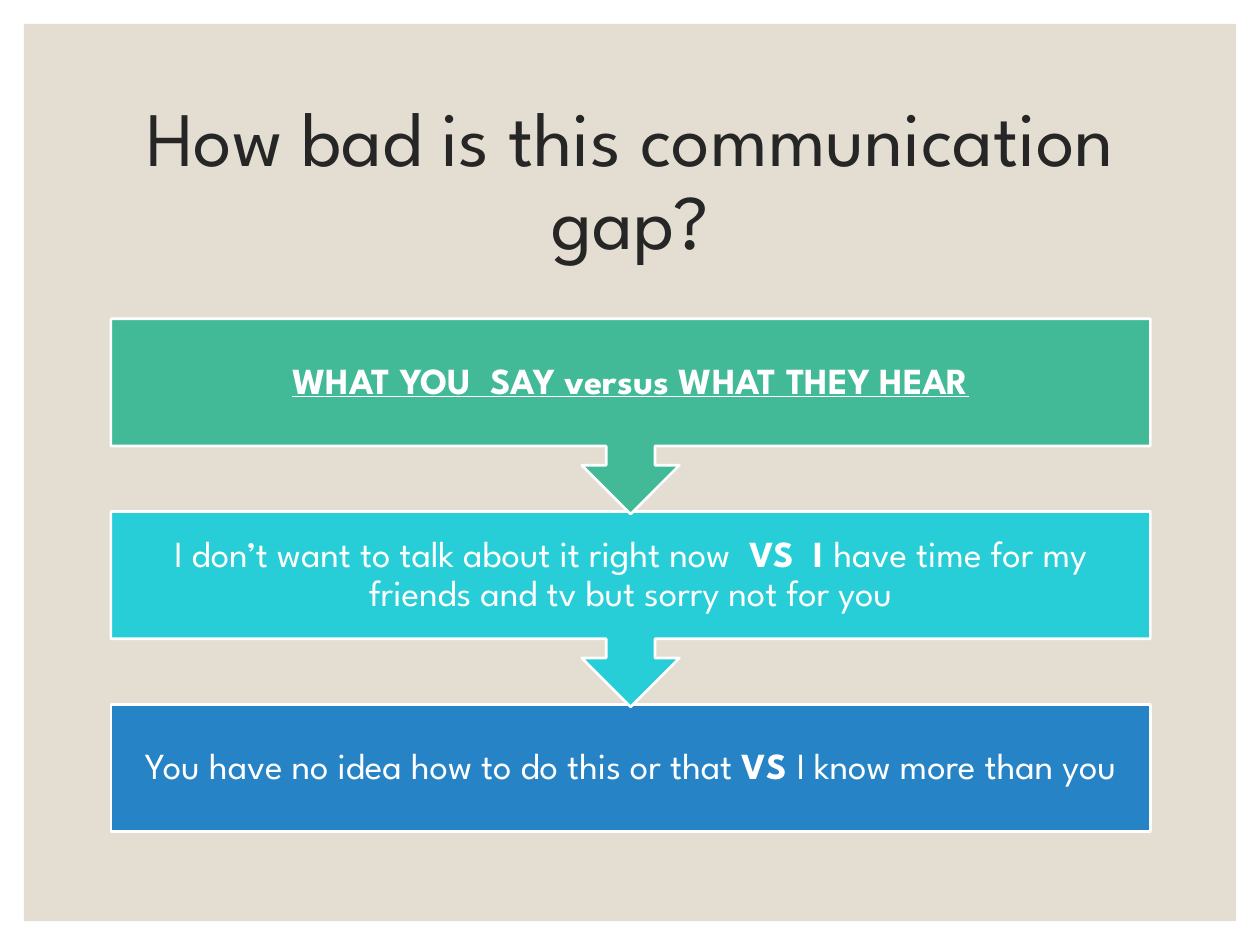
from dataclasses import dataclass

from pptx import Presentation
from pptx.dml.color import RGBColor
from pptx.enum.shapes import MSO_SHAPE
from pptx.enum.text import MSO_ANCHOR, PP_ALIGN
from pptx.util import Inches, Pt

RECTANGLE = MSO_SHAPE.RECTANGLE
DOWN_CALLOUT = MSO_SHAPE.DOWN_ARROW_CALLOUT
CENTER = PP_ALIGN.CENTER
MIDDLE = MSO_ANCHOR.MIDDLE


@dataclass(frozen=True)
class Theme:
    """Colours, font and type sizes of the slide."""
    font: str = "League Spartan"
    panel: str = "E3DED1"
    ink: str = "262626"
    white: str = "FFFFFF"
    steps: tuple = ("42BA97", "27CED7", "2683C6")
    title_size: int = 44
    step_size: int = 21
    outline: float = 1.5


THEME = Theme()
STEPS = (
    (("WHAT YOU  SAY versus WHAT THEY HEAR", {"bold": True, "underline": True}),),
    (
        ("I don’t want to talk about it right now  ", {}),
        ("VS  I ", {"bold": True}),
        ("have time for my friends and tv but sorry not for you", {}),
    ),
    (
        ("You have no idea how to do this or that ", {}),
        ("VS ", {"bold": True}),
        ("I know more than you", {}),
    ),
)


def add_run(paragraph, text, *, size, color, bold=False, underline=False):
    """Append formatted text to a paragraph."""
    run = paragraph.add_run()
    run.text = text
    font = run.font
    font.name = THEME.font
    font.size = Pt(size)
    font.bold = bold
    font.underline = underline
    font.color.rgb = RGBColor.from_string(color)


def centre_text(frame, horizontal, vertical):
    """Set up a wrapped, centred frame and return its paragraph."""
    frame.word_wrap = True
    frame.vertical_anchor = MIDDLE
    frame.margin_left = frame.margin_right = Inches(horizontal)
    frame.margin_top = frame.margin_bottom = Inches(vertical)
    paragraph = frame.paragraphs[0]
    paragraph.alignment = CENTER
    paragraph.line_spacing = 0.9
    return paragraph


def add_block(slide, kind, box, fill, line=None):
    """Draw a flat filled shape, outlined when a line colour is given."""
    block = slide.shapes.add_shape(kind, *map(Inches, box))
    block.shadow.inherit = False
    block.fill.solid()
    block.fill.fore_color.rgb = RGBColor.from_string(fill)
    if line:
        block.line.color.rgb = RGBColor.from_string(line)
        block.line.width = Pt(THEME.outline)
    else:
        block.line.fill.background()
    return block


def add_title(slide, box, text):
    """Place the slide title in its box."""
    title = slide.shapes.add_textbox(*map(Inches, box))
    paragraph = centre_text(title.text_frame, 0.1, 0.05)
    add_run(paragraph, text, size=THEME.title_size, color=THEME.ink)


def add_flow(slide, box, steps):
    """Stack the steps down the box, each pointing to the next."""
    left, top, width, height = box
    body, callout = 1.01, 1.55
    last = len(steps) - 1
    pitch = (height - body) / last
    for index in reversed(range(len(steps))):
        is_last = index == last
        step = add_block(
            slide,
            RECTANGLE if is_last else DOWN_CALLOUT,
            (left, top + index * pitch, width, body if is_last else callout),
            THEME.steps[index],
            THEME.white,
        )
        if not is_last:
            step.adjustments[3] = body / callout
        paragraph = centre_text(step.text_frame, 0.16, 0.16)
        for text, style in steps[index]:
            add_run(paragraph, text, size=THEME.step_size, color=THEME.white, **style)


def main():
    """Build and save the slide."""
    deck = Presentation()
    deck.slide_width, deck.slide_height = Inches(10), Inches(7.5)
    slide = deck.slides.add_slide(deck.slide_layouts[6])
    add_block(slide, RECTANGLE, (0.19, 0.19, 9.62, 7.12), THEME.panel)
    add_title(slide, (0.88, 0.7, 8.25, 1.5), "How bad is this communication gap?")
    add_flow(slide, (0.88, 2.53, 8.25, 4.07), STEPS)
    deck.save("out.pptx")


if __name__ == "__main__":
    main()
